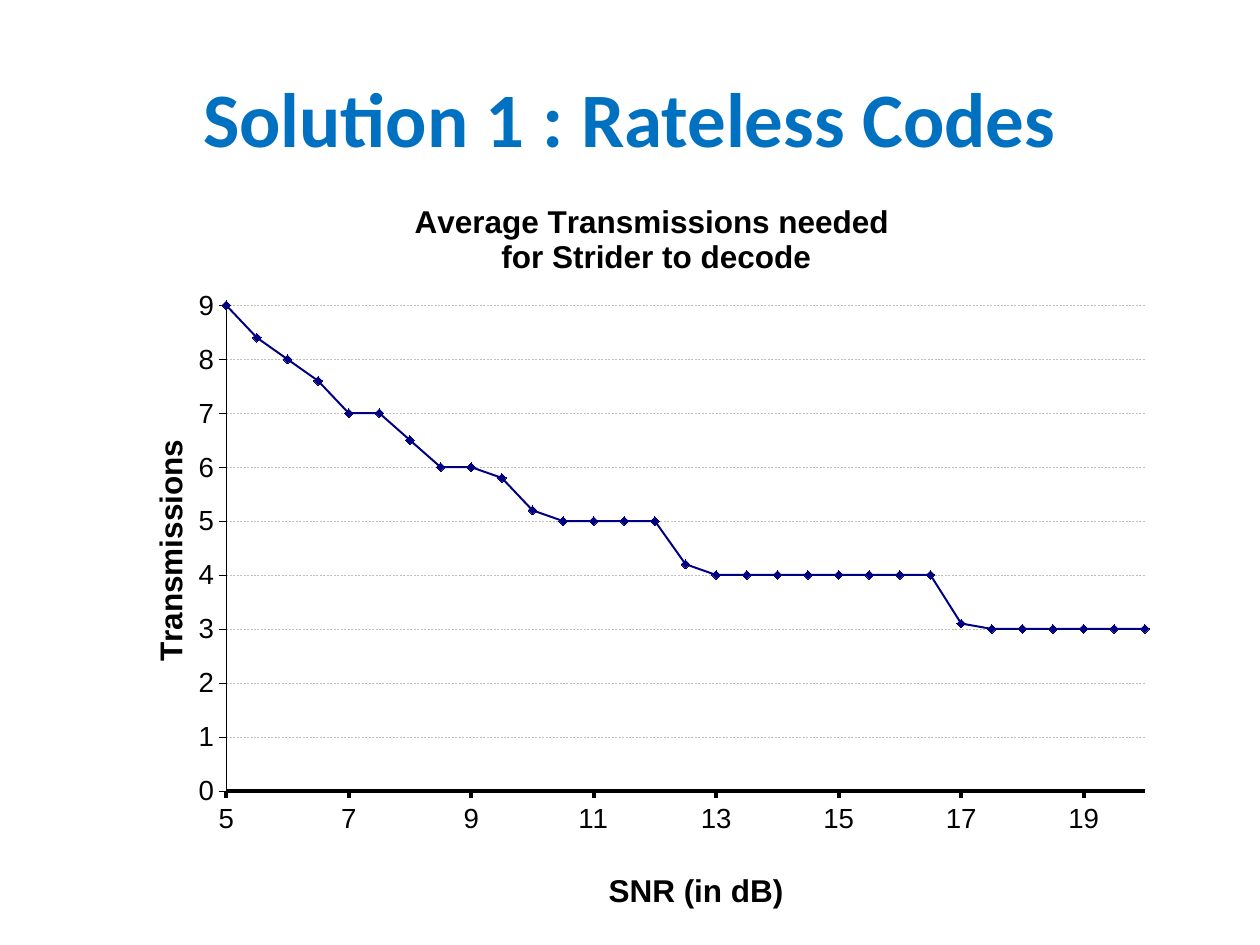
from lxml.etree import SubElement
from pptx import Presentation
from pptx.chart.data import XyChartData
from pptx.dml.color import RGBColor
from pptx.enum.chart import XL_CHART_TYPE as ChartType, XL_MARKER_STYLE as Marker
from pptx.enum.chart import XL_TICK_LABEL_POSITION as LabelPosition, XL_TICK_MARK as Tick
from pptx.enum.dml import MSO_LINE
from pptx.enum.text import MSO_ANCHOR, PP_ALIGN
from pptx.oxml.ns import qn
from pptx.util import Cm, Pt

# Content
TITLE = "Solution 1 : Rateless Codes"
CHART_TITLE = "Average Transmissions needed\n for Strider to decode"
SNR_START, SNR_STEP = 5, 0.5
TRANSMISSIONS = [9, 8.4, 8, 7.6, 7, 7, 6.5, 6, 6, 5.8, 5.2, 5, 5, 5, 5, 4.2,
                 4, 4, 4, 4, 4, 4, 4, 4, 3.1, 3, 3, 3, 3, 3, 3]

# Axis: title, title position, minimum, maximum, unit, line width
SNR_AXIS = ("SNR (in dB)", (0.46, 0.91), 5, 20, 2, 2.25)
COUNT_AXIS = ("Transmissions ", (0.03, 0.33), 0, 9, 1, 0.28)

BLUE = RGBColor(0x00, 0x70, 0xC0)
NAVY = RGBColor(0x00, 0x00, 0x80)
BLACK = RGBColor(0x00, 0x00, 0x00)
GREY = RGBColor(0xBF, 0xBF, 0xBF)


def write_text(frame, text, font="Arial", size=18, color=BLACK, bold=True):
    for index, line in enumerate(text.split("\n")):
        paragraph = frame.add_paragraph() if index else frame.paragraphs[0]
        paragraph.alignment = PP_ALIGN.CENTER
        run = paragraph.add_run()
        run.text = line
        run.font.name, run.font.size = font, Pt(size)
        run.font.bold, run.font.color.rgb = bold, color


def place(element, index, **position):
    """Give a chart part a manual layout in fractions of the chart."""
    for old in element.findall(qn("c:layout")):
        element.remove(old)
    layout = element.makeelement(qn("c:layout"))
    element.insert(index, layout)
    manual = SubElement(layout, qn("c:manualLayout"))
    if "w" in position:
        SubElement(manual, qn("c:layoutTarget"), val="inner")
    for side in ("x", "y"):
        SubElement(manual, qn(f"c:{side}Mode"), val="edge")
    for side, value in position.items():
        SubElement(manual, qn(f"c:{side}"), val=str(value))


def format_line(line, color, width):
    line.color.rgb, line.width = color, Pt(width)


def format_axis(axis, title, position, minimum, maximum, unit, width):
    axis.has_title = True
    write_text(axis.axis_title.text_frame, title)
    place(axis.axis_title.element, 1, x=position[0], y=position[1])
    axis.minimum_scale, axis.maximum_scale, axis.major_unit = minimum, maximum, unit
    axis.major_tick_mark, axis.minor_tick_mark = Tick.OUTSIDE, Tick.NONE
    axis.tick_label_position = LabelPosition.NEXT_TO_AXIS
    axis.tick_labels.number_format = "General"
    axis.tick_labels.number_format_is_linked = False
    font = axis.tick_labels.font
    font.name, font.size, font.color.rgb = "Arial", Pt(15.8), BLACK
    axis.has_major_gridlines = False
    format_line(axis.format.line, BLACK, width)


presentation = Presentation()
presentation.slide_width, presentation.slide_height = Cm(25.4), Cm(19.05)
slide = presentation.slides.add_slide(presentation.slide_layouts[5])

# Slide title
title = slide.shapes.title
title.left, title.top, title.width, title.height = Cm(1.27), Cm(0.76), Cm(22.86), Cm(3.18)
title.text_frame.vertical_anchor = MSO_ANCHOR.MIDDLE
write_text(title.text_frame, TITLE, font="Calibri", size=44, color=BLUE)

# Chart
data = XyChartData()
points = data.add_series("Series 1")
for index, count in enumerate(TRANSMISSIONS):
    points.add_data_point(SNR_START + index * SNR_STEP, count)
chart = slide.shapes.add_chart(ChartType.XY_SCATTER_SMOOTH, Cm(2.26), Cm(3.53),
                               Cm(21.51), Cm(15.27), data).chart
chart.has_legend = False
chart.font.name, chart.font.size, chart.font.color.rgb = "Arial", Pt(13), BLACK
chart.has_title = True
write_text(chart.chart_title.text_frame, CHART_TITLE)
place(chart.chart_title.element, 1, x=0.28, y=0.03)
place(chart.element.find(".//" + qn("c:plotArea")), 0, x=0.107, y=0.172, w=0.861, h=0.641)

# Axes and gridlines
format_axis(chart.category_axis, *SNR_AXIS)
format_axis(chart.value_axis, *COUNT_AXIS)
gridline = chart.value_axis.major_gridlines.format.line
format_line(gridline, GREY, 0.28)
gridline.dash_style = MSO_LINE.DASH

# Series
plot = chart.plots[0]
plot.vary_by_categories = False
series = plot.series[0]
series.smooth = True
format_line(series.format.line, NAVY, 1.13)
series.marker.style, series.marker.size = Marker.DIAMOND, 5
series.marker.format.fill.solid()
series.marker.format.fill.fore_color.rgb = NAVY
series.marker.format.line.color.rgb = NAVY

presentation.save("out.pptx")
